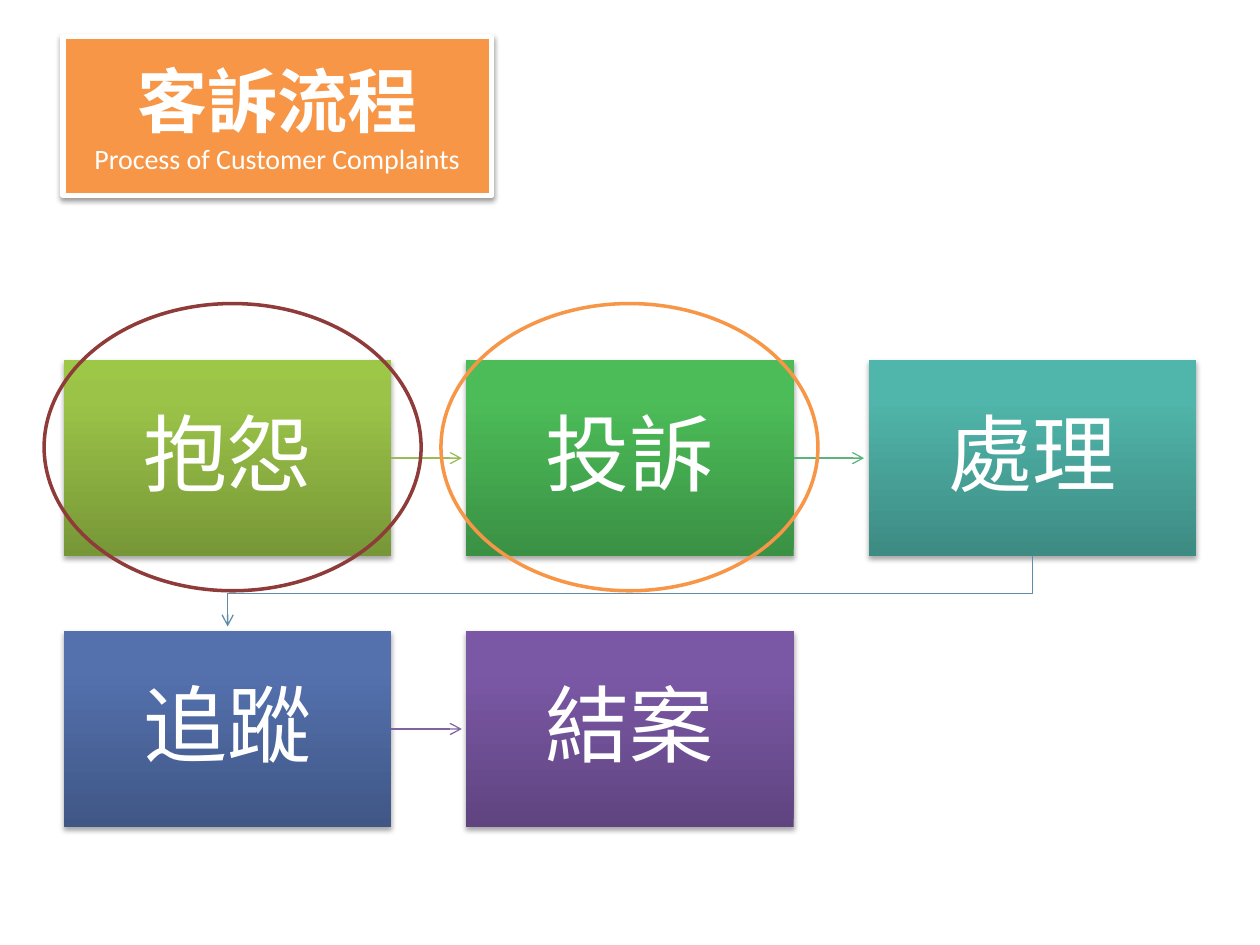
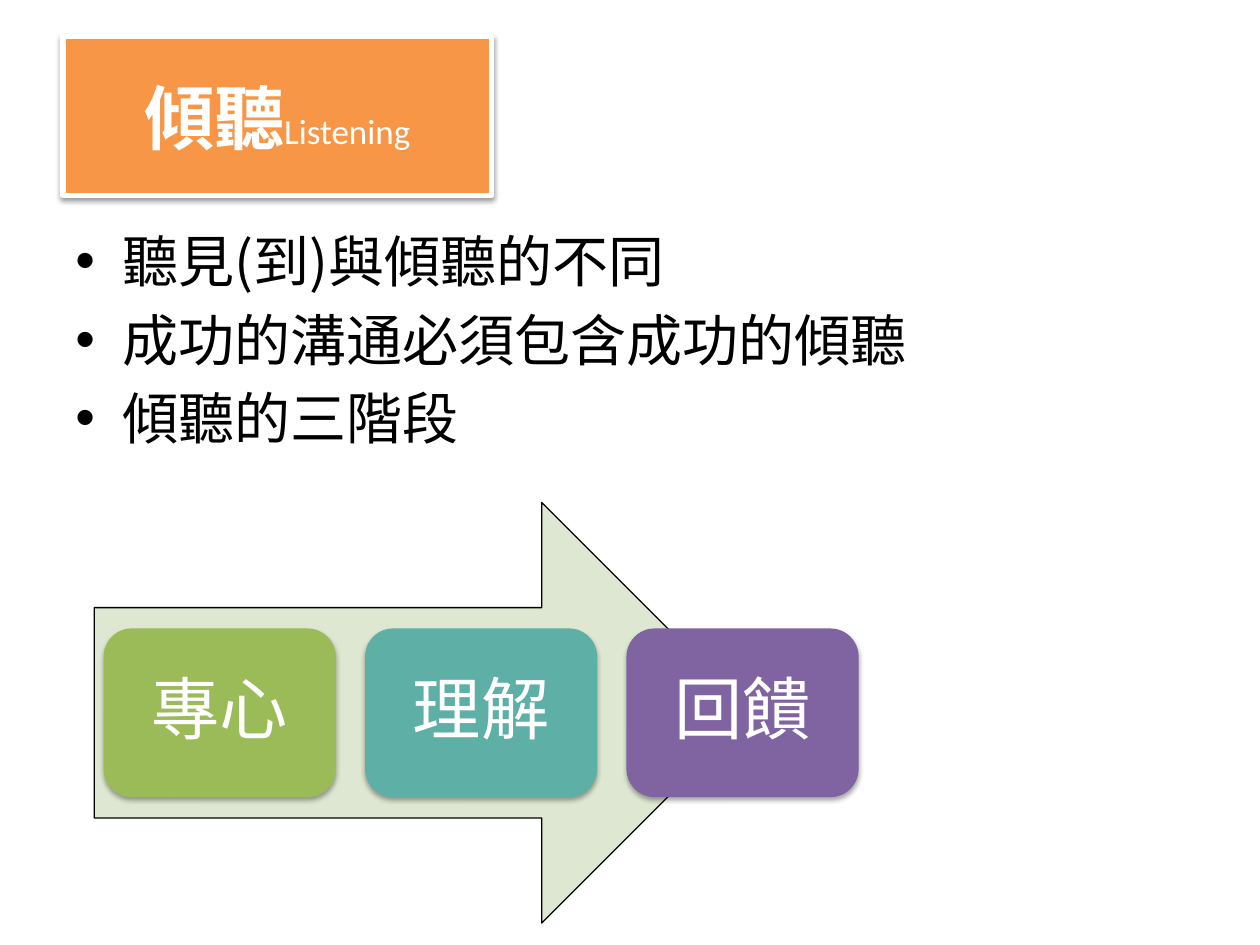
"""Build two slides on customer complaints: the process and the skill of listening."""
import copy

import pptx
import pptx.dml.color
import pptx.enum.shapes
import pptx.enum.text
import pptx.oxml.ns
import pptx.oxml.xmlchemy
import pptx.util

Cm = pptx.util.Cm
Pt = pptx.util.Pt
qn = pptx.oxml.ns.qn
new_element = pptx.oxml.xmlchemy.OxmlElement
SHAPE = pptx.enum.shapes.MSO_SHAPE
CENTER = pptx.enum.text.PP_ALIGN.CENTER
MIDDLE = pptx.enum.text.MSO_ANCHOR.MIDDLE
CJK_FONT = "Noto Sans CJK SC"
LATIN_FONT = "Calibri"
ORANGE, WHITE, BLACK = "F79646", "FFFFFF", "000000"


def rgb(hex_value):
    """Return the colour for a hex string."""
    return pptx.dml.color.RGBColor.from_string(hex_value)


def write(paragraph, text, colour, **font_format):
    """Add a run of text with the given font values."""
    run = paragraph.add_run()
    run.text = text
    for name, value in font_format.items():
        setattr(run.font, name, value)
    run.font.color.rgb = rgb(colour)
    east_asian = new_element("a:ea")
    east_asian.set("typeface", CJK_FONT)
    run.font._element.append(east_asian)


presentation = pptx.Presentation()
presentation.slide_width = Cm(25.4)
presentation.slide_height = Cm(19.05)

title_heading = {"name": CJK_FONT, "size": Pt(40), "bold": True}
process_subtitle = {"name": LATIN_FONT, "size": Pt(16), "bold": False}
listening_subtitle = {"name": LATIN_FONT, "size": Pt(20), "bold": False}
titles = [
    [[("客訴流程", title_heading)], [("Process of Customer Complaints", process_subtitle)]],
    [[("傾聽", title_heading), ("Listening", listening_subtitle)]],
]
slides = []
shadows = []
for title_lines in titles:
    slide = presentation.slides.add_slide(presentation.slide_layouts[5])
    slides.append(slide)
    title = slide.shapes.title
    box = {"left": Cm(1.27), "top": Cm(0.74), "width": Cm(8.64), "height": Cm(3.2)}
    for name, value in box.items():
        setattr(title, name, value)
    title.fill.solid()
    title.fill.fore_color.rgb = rgb(ORANGE)
    title.line.color.rgb = rgb(WHITE)
    title.line.width = Pt(3)
    title_frame = title.text_frame
    title_frame.auto_size = pptx.enum.text.MSO_AUTO_SIZE.NONE
    title_frame.vertical_anchor = MIDDLE
    for index, runs in enumerate(title_lines):
        paragraph = title_frame.add_paragraph() if index else title_frame.paragraphs[0]
        paragraph.alignment = CENTER
        for text, font_format in runs:
            write(paragraph, text, WHITE, **font_format)
    shadows.append((title, 38, 1.6))
process_slide, listening_slide = slides

steps = [
    ("抱怨", ["779737", "9BC348", "9DC746"]),
    ("投訴", ["3A9144", "4CBC58", "4ABF57"]),
    ("處理", ["3D8B83", "50B5AA", "4EB8AC"]),
    ("追蹤", ["405786", "5471AE", "5271B0"]),
    ("結案", ["5F4480", "7B58A6", "7C57A8"]),
]
step_width, step_height = 6.6, 3.95
step_boxes = []
labels = []
for index, (text, gradient) in enumerate(steps):
    row, column = divmod(index, 3)
    step_box = process_slide.shapes.add_shape(
        SHAPE.RECTANGLE, Cm(1.29 + 8.11 * column), Cm(7.26 + 5.46 * row),
        Cm(step_width), Cm(step_height))
    step_box.fill.gradient()
    step_box.fill.gradient_angle = 90
    stop_list = step_box._element.spPr.find(qn("a:gradFill")).find(qn("a:gsLst"))
    stop_list.append(copy.deepcopy(stop_list[-1]))
    for stop, position, colour in zip(step_box.fill.gradient_stops, [0, 0.8, 1], gradient):
        stop.position = position
        stop.color.rgb = rgb(colour)
    step_boxes.append(step_box)
    labels.append((step_box, text, LATIN_FONT, 48, 0.93))

flow_lines = []
for start, colour in [(0, "9BBB59"), (1, "5CB37C"), (3, "8064A2")]:
    source, target = step_boxes[start], step_boxes[start + 1]
    middle = source.top + source.height // 2
    arrow = process_slide.shapes.add_connector(
        pptx.enum.shapes.MSO_CONNECTOR.STRAIGHT,
        source.left + source.width, middle, target.left - Cm(0.09), middle)
    arrow.begin_connect(source, 3)
    flow_lines.append((arrow, colour))

source, target = step_boxes[2], step_boxes[3]
source_x = source.left + source.width // 2
target_x = target.left + target.width // 2
turn_y = Cm(11.96)
builder = process_slide.shapes.build_freeform(source_x, source.top + source.height)
builder.add_line_segments(
    [(source_x, turn_y), (target_x, turn_y), (target_x, target.top - Cm(0.09))], close=False)
return_path = builder.convert_to_shape()
return_path.fill.background()
return_path.shadow.inherit = False
flow_lines.append((return_path, "608CAB"))

for flow_line, colour in flow_lines:
    flow_line.line.color.rgb = rgb(colour)
    flow_line.line.width = Pt(0.75)
    properties = flow_line._element.spPr
    arrowhead = new_element("a:tailEnd")
    arrowhead.set("type", "arrow")
    properties.find(qn("a:ln")).append(arrowhead)
    if properties.find(qn("a:effectLst")) is None:
        properties.append(new_element("a:effectLst"))

for index, colour in enumerate(["8E3B39", ORANGE]):
    ellipse = process_slide.shapes.add_shape(
        SHAPE.OVAL, Cm(0.89 + 8 * index), Cm(6.12), Cm(7.6), Cm(5.79))
    ellipse.fill.background()
    ellipse.line.color.rgb = rgb(colour)
    ellipse.line.width = Pt(2)
    ellipse.shadow.inherit = False

bullet_box = listening_slide.shapes.add_textbox(Cm(1.27), Cm(4.45), Cm(22.86), Cm(12.57))
bullet_frame = bullet_box.text_frame
bullet_frame.word_wrap = True
for index, text in enumerate(["聽見(到)與傾聽的不同", "成功的溝通必須包含成功的傾聽", "傾聽的三階段"]):
    paragraph = bullet_frame.add_paragraph() if index else bullet_frame.paragraphs[0]
    if index:
        paragraph.space_before = Pt(6.4)
    paragraph_properties = paragraph._element.get_or_add_pPr()
    paragraph_properties.set("marL", str(Cm(0.95)))
    paragraph_properties.set("indent", str(-Cm(0.95)))
    for tag, name, value in [("a:buFont", "typeface", "Arial"), ("a:buChar", "char", "•")]:
        bullet = new_element(tag)
        bullet.set(name, value)
        paragraph_properties.append(bullet)
    write(paragraph, text, BLACK, name=CJK_FONT, size=Pt(32))

stage_arrow = listening_slide.shapes.add_shape(
    SHAPE.RIGHT_ARROW, Cm(1.9), Cm(10.13), Cm(13.26), Cm(8.48))
stage_arrow.fill.solid()
stage_arrow.fill.fore_color.rgb = rgb("DEE7D1")
stage_arrow.line.color.rgb = rgb(BLACK)
stage_arrow.line.width = Pt(0.75)
stage_arrow.shadow.inherit = False

stages = [("專心", "9BBB59"), ("理解", "5EAFA6"), ("回饋", "8064A2")]
for index, (text, colour) in enumerate(stages):
    stage_box = listening_slide.shapes.add_shape(
        SHAPE.ROUNDED_RECTANGLE, Cm(2.09 + 5.27 * index), Cm(12.67), Cm(4.68), Cm(3.4))
    stage_box.fill.solid()
    stage_box.fill.fore_color.rgb = rgb(colour)
    labels.append((stage_box, text, CJK_FONT, 39, 0.41))

for shape, text, font_name, size, inset in labels:
    shape.line.fill.background()
    text_frame = shape.text_frame
    text_frame.word_wrap = True
    text_frame.vertical_anchor = MIDDLE
    for side in ["left", "top", "right", "bottom"]:
        setattr(text_frame, f"margin_{side}", Cm(inset))
    paragraph = text_frame.paragraphs[0]
    spacing = {"alignment": CENTER, "line_spacing": 0.9, "space_after": Pt(round(size * 0.35, 1))}
    for name, value in spacing.items():
        setattr(paragraph, name, value)
    write(paragraph, text, WHITE, name=font_name, size=Pt(size))
    shadows.append((shape, 35, 1.8))

for shape, opacity, distance in shadows:
    shape.shadow.inherit = False
    shadow = new_element("a:outerShdw")
    shadow_format = {"blurRad": Pt(3.1), "dist": Pt(distance), "dir": 90 * 60000, "rotWithShape": 0}
    for name, value in shadow_format.items():
        shadow.set(name, str(value))
    shadow_colour = new_element("a:srgbClr")
    shadow_colour.set("val", BLACK)
    alpha = new_element("a:alpha")
    alpha.set("val", str(opacity * 1000))
    shadow_colour.append(alpha)
    shadow.append(shadow_colour)
    shape._element.spPr.find(qn("a:effectLst")).append(shadow)

presentation.save("out.pptx")
